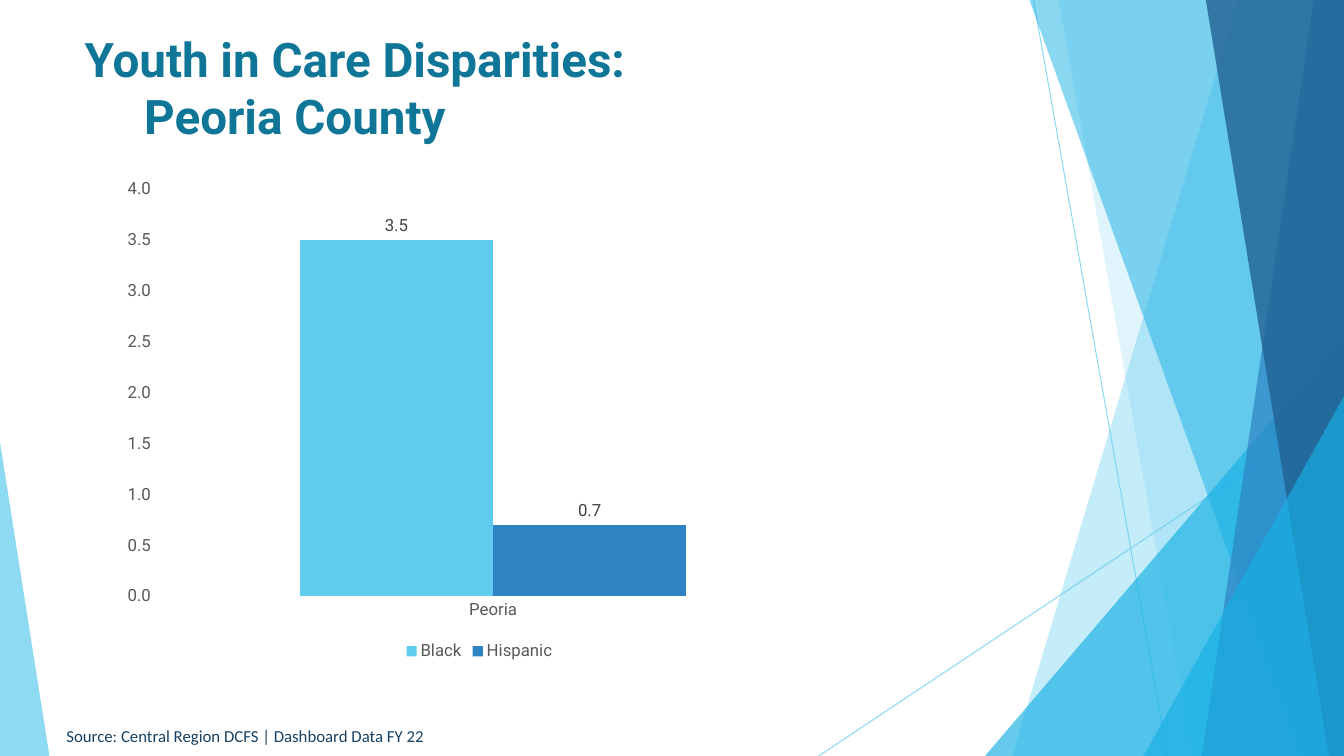
from pptx import Presentation
from pptx.chart.data import CategoryChartData
from pptx.dml.color import RGBColor
from pptx.enum.chart import XL_CHART_TYPE, XL_LABEL_POSITION, XL_LEGEND_POSITION, XL_TICK_MARK
from pptx.enum.shapes import MSO_CONNECTOR, MSO_SHAPE
from pptx.enum.text import MSO_ANCHOR, MSO_AUTO_SIZE, PP_ALIGN
from pptx.oxml.ns import qn
from pptx.util import Inches, Pt

SKY = RGBColor(0x5F, 0xCB, 0xEF)
CYAN = RGBColor(0x17, 0xB0, 0xE4)
BLUE = RGBColor(0x2E, 0x83, 0xC3)
NAVY = RGBColor(0x22, 0x62, 0x92)
TEAL = RGBColor(0x0F, 0x76, 0x98)
INK = RGBColor(0x17, 0x41, 0x62)
AXIS_GRAY = RGBColor(0x59, 0x59, 0x59)
LABEL_GRAY = RGBColor(0x40, 0x40, 0x40)
WIDTH, HEIGHT = 13.33, 7.5


def set_font(font, name, size, color, bold=False):
    font.name, font.size, font.bold = name, Pt(size), bold
    font.color.rgb = color


def set_opacity(fill_parent, percent):
    """Make the solid fill inside the given element partly transparent."""
    color = fill_parent.find(qn("a:solidFill"))[0]
    color.makeelement(qn("a:alpha"), {})
    alpha = color.makeelement(qn("a:alpha"), {"val": str(percent * 1000)})
    color.append(alpha)


def tint(sp, color, opacity):
    sp.shadow.inherit = False
    sp.fill.solid()
    sp.fill.fore_color.rgb = color
    sp.line.fill.background()
    set_opacity(sp._element.spPr, opacity)


def add_ray(s, x1, y1, x2, y2):
    ray = s.shapes.add_connector(
        MSO_CONNECTOR.STRAIGHT, Inches(x1), Inches(y1), Inches(x2), Inches(y2))
    ray.line.color.rgb = SKY
    ray.line.width = Pt(0.75)
    sp_pr = ray._element.spPr
    set_opacity(sp_pr.find(qn("a:ln")), 70)
    sp_pr.append(sp_pr.makeelement(qn("a:effectLst"), {}))


def add_band(s, top_x, bottom_x, color, opacity):
    """Add a full-height band from a slanted left edge to the right slide edge."""
    builder = s.shapes.build_freeform(Inches(top_x), 0)
    corners = [(WIDTH, 0), (WIDTH, HEIGHT), (bottom_x, HEIGHT)]
    builder.add_line_segments([(Inches(x), Inches(y)) for x, y in corners])
    tint(builder.convert_to_shape(), color, opacity)


def add_wedge(s, left, top, width, apex, color, opacity):
    """Add a right triangle standing on the bottom slide edge."""
    sp = s.shapes.add_shape(
        MSO_SHAPE.ISOSCELES_TRIANGLE, Inches(left), Inches(top),
        Inches(width), Inches(HEIGHT - top))
    sp.adjustments[0] = apex
    tint(sp, color, opacity)


def add_backdrop(s):
    add_ray(s, 10.25, 0, 11.58, HEIGHT)
    add_ray(s, WIDTH, 4.03, 8.12, HEIGHT)
    add_band(s, 12.28, 10.04, SKY, 36)
    add_band(s, 10.5, 11.83, SKY, 20)
    add_wedge(s, 9.77, 3.33, 3.56, 1, CYAN, 66)
    add_band(s, 10.21, 12.91, CYAN, 50)
    add_band(s, 13.03, 11.92, BLUE, 70)
    add_band(s, 11.96, 13.18, NAVY, 80)
    add_wedge(s, 11.34, 3.93, 1.99, 1, CYAN, 66)
    add_wedge(s, 0, 4.39, 0.49, 0, SKY, 70)


def set_title(s, text):
    title = s.shapes.title
    title.left, title.top = Inches(0.74), Inches(0.32)
    title.width, title.height = Inches(9.4), Inches(1.09)
    tf = title.text_frame
    tf.vertical_anchor = MSO_ANCHOR.MIDDLE
    tf.auto_size = MSO_AUTO_SIZE.NONE
    tf.text = text
    p = tf.paragraphs[0]
    p.alignment = PP_ALIGN.LEFT
    hang = Inches(0.59)
    p_pr = p._p.get_or_add_pPr()
    p_pr.set("marL", str(hang))
    p_pr.set("indent", str(-hang))
    set_font(p.font, "Roboto", 34, TEAL, bold=True)


def format_axis(axis):
    axis.has_major_gridlines = False
    axis.major_tick_mark = axis.minor_tick_mark = XL_TICK_MARK.NONE
    axis.format.line.fill.background()
    set_font(axis.tick_labels.font, "Roboto", 12, AXIS_GRAY)


def add_disparity_chart(s):
    data = CategoryChartData(number_format="0.0")
    data.categories = ["Peoria"]
    data.add_series("Black", [3.5])
    data.add_series("Hispanic", [0.7])
    chart = s.shapes.add_chart(
        XL_CHART_TYPE.COLUMN_CLUSTERED, Inches(1.12), Inches(1.68),
        Inches(7.27), Inches(4.92), data).chart
    chart.has_title = False
    set_font(chart.font, "Roboto", 12, AXIS_GRAY)

    format_axis(chart.category_axis)
    values = chart.value_axis
    format_axis(values)
    values.minimum_scale, values.maximum_scale, values.major_unit = 0, 4, 0.5
    values.tick_labels.number_format = "0.0"
    values.tick_labels.number_format_is_linked = False

    chart.has_legend = True
    chart.legend.position = XL_LEGEND_POSITION.BOTTOM
    chart.legend.include_in_layout = False
    set_font(chart.legend.font, "Roboto", 12, AXIS_GRAY)

    plot = chart.plots[0]
    plot.gap_width, plot.overlap = 150, 0
    plot.vary_by_categories = False
    for series, color in zip(plot.series, (SKY, BLUE)):
        series.format.fill.solid()
        series.format.fill.fore_color.rgb = color
        labels = series.data_labels
        labels.show_value = True
        labels.position = XL_LABEL_POSITION.OUTSIDE_END
        labels.number_format = "0.0"
        labels.number_format_is_linked = False
        set_font(labels.font, "Roboto", 12, LABEL_GRAY)


def add_source_note(s, text):
    tf = s.shapes.add_textbox(
        Inches(0.56), Inches(7.15), Inches(3.76), Inches(0.3)).text_frame
    tf.word_wrap = True
    tf.text = text
    set_font(tf.paragraphs[0].font, "Calibri", 12, INK)


def main():
    prs = Presentation()
    prs.slide_width, prs.slide_height = Inches(WIDTH), Inches(HEIGHT)
    s = prs.slides.add_slide(prs.slide_layouts[5])
    add_backdrop(s)
    set_title(s, "Youth in Care Disparities:\vPeoria County")
    add_disparity_chart(s)
    add_source_note(s, "Source: Central Region DCFS | Dashboard Data FY 22")
    prs.save("out.pptx")


if __name__ == "__main__":
    main()
